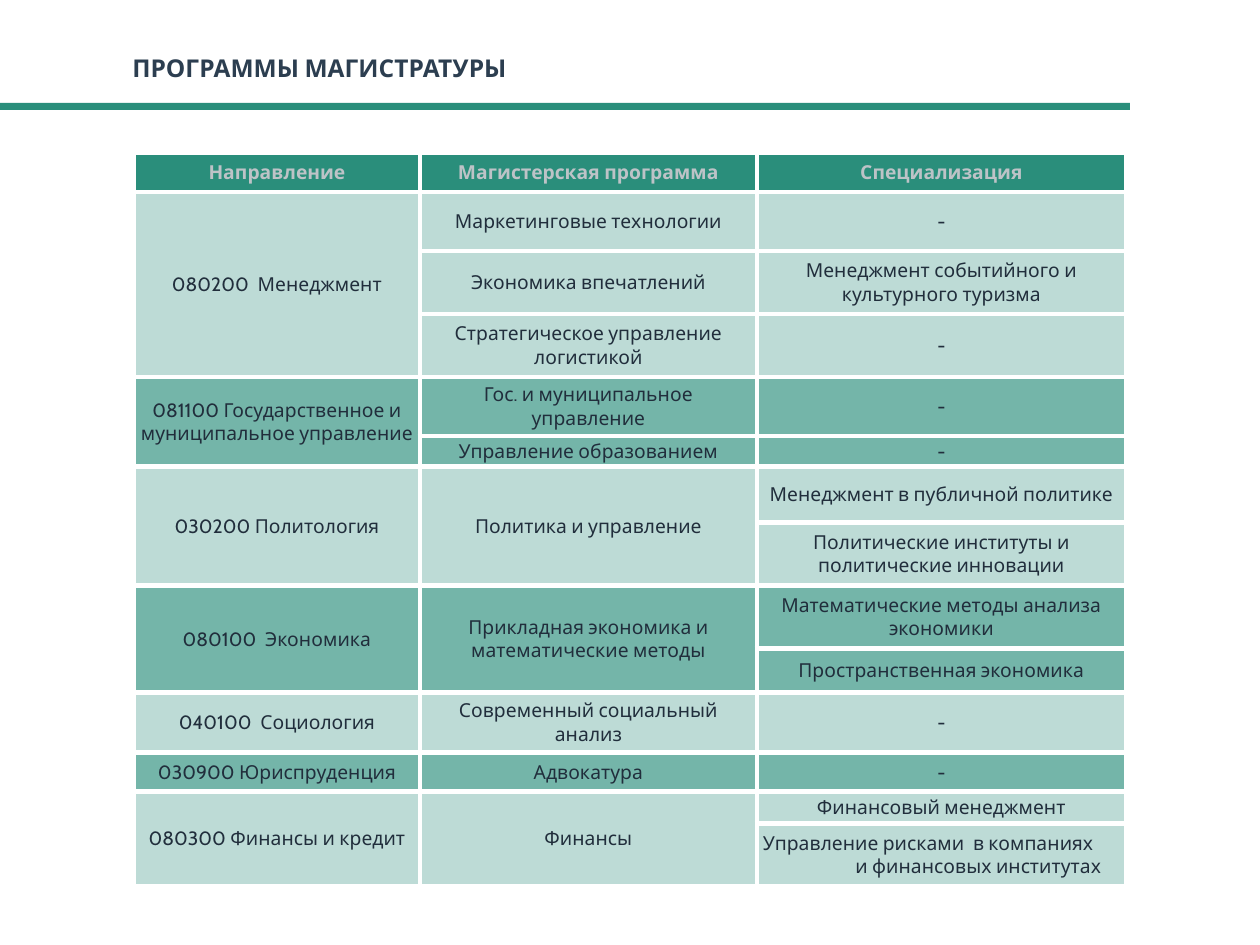
from dataclasses import dataclass

from lxml import etree
from pptx import Presentation
from pptx.dml.color import RGBColor
from pptx.enum.shapes import MSO_SHAPE
from pptx.enum.text import MSO_ANCHOR, PP_ALIGN
from pptx.oxml.ns import qn
from pptx.util import Pt

PX = 914400 // 126
RECTANGLE = MSO_SHAPE.RECTANGLE
MIDDLE = MSO_ANCHOR.MIDDLE
CENTER, LEFT = PP_ALIGN.CENTER, PP_ALIGN.LEFT


@dataclass(frozen=True)
class Theme:
    """Colours, font and type sizes of the slide."""
    font: str = "Cabin"
    accent: str = "2A8E7B"
    title: str = "2C3E50"
    header: str = "BDC3C7"
    body: str = "212E3C"
    border: str = "FFFFFF"
    title_size: int = 14
    table_size: int = 11
    border_width: int = 3
    light: int = 31
    dark: int = 65


THEME = Theme()
TITLE = "ПРОГРАММЫ МАГИСТРАТУРЫ"
HEADERS = ["Направление", "Магистерская программа", "Специализация"]
DIRECTIONS = [
    ("080200  Менеджмент", [
        ("Маркетинговые технологии", ["-"]),
        ("Экономика впечатлений", ["Менеджмент событийного и культурного туризма"]),
        ("Стратегическое управление логистикой", ["-"])]),
    ("081100 Государственное и муниципальное управление", [
        ("Гос. и муниципальное управление", ["-"]),
        ("Управление образованием", ["-"])]),
    ("030200 Политология", [
        ("Политика и управление", [
            "Менеджмент в публичной политике",
            "Политические институты и политические инновации"])]),
    ("080100  Экономика", [
        ("Прикладная экономика и математические методы", [
            "Математические методы анализа экономики",
            "Пространственная экономика"])]),
    ("040100  Социология", [("Современный социальный анализ", ["-"])]),
    ("030900 Юриспруденция", [("Адвокатура", ["-"])]),
    ("080300 Финансы и кредит", [
        ("Финансы", [
            "Финансовый менеджмент",
            "Управление рисками  в компаниях\nи финансовых институтах"])]),
]
COLUMN_WIDTHS = [286, 337, 369]
ROW_HEIGHTS = [39, 59, 63, 63, 59, 31, 56, 63, 63, 44, 60, 39, 32, 63]
SECOND_LINE_INDENT = 74


def style_run(run, size, color, bold):
    """Apply the theme font with the given size, colour and weight."""
    run.font.name = THEME.font
    run.font.size = Pt(size)
    run.font.bold = bold
    run.font.color.rgb = RGBColor.from_string(color)


def fill_cell(cell, opacity):
    """Give a cell white borders and the accent fill at an opacity in percent."""
    properties = cell._tc.get_or_add_tcPr()
    for side in ("a:lnL", "a:lnR", "a:lnT", "a:lnB"):
        line = etree.SubElement(properties, qn(side), w=str(Pt(THEME.border_width)))
        solid = etree.SubElement(line, qn("a:solidFill"))
        etree.SubElement(solid, qn("a:srgbClr"), val=THEME.border)
    cell.fill.solid()
    cell.fill.fore_color.rgb = RGBColor.from_string(THEME.accent)
    if opacity < 100:
        color = properties.find(qn("a:solidFill")).find(qn("a:srgbClr"))
        etree.SubElement(color, qn("a:alpha"), val=str(opacity * 1000))


def write_cell(cell, text, color, bold=False):
    """Write centred text; a second line is stepped to the right."""
    cell.text_frame.text = text
    paragraphs = cell.text_frame.paragraphs
    for paragraph in paragraphs:
        paragraph.alignment = CENTER
        paragraph.space_after = Pt(10)
        for run in paragraph.runs:
            style_run(run, THEME.table_size, color, bold)
    if len(paragraphs) > 1:
        paragraphs[0].alignment = LEFT
        paragraphs[0].space_after = Pt(0)
        paragraphs[1]._p.get_or_add_pPr().set("marL", str(SECOND_LINE_INDENT * PX))


def write_spanning(table, row, column, span, text):
    """Write a body cell that covers the given number of rows."""
    cell = table.cell(row, column)
    if span > 1:
        cell.merge(table.cell(row + span - 1, column))
    write_cell(cell, text, THEME.body)


def add_title(slide, left, top, width, height):
    """Place the slide heading in its box."""
    heading = slide.shapes.add_textbox(left * PX, top * PX, width * PX, height * PX)
    heading.text_frame.word_wrap = True
    heading.text_frame.text = TITLE
    style_run(heading.text_frame.paragraphs[0].runs[0],
              THEME.title_size, THEME.title, True)


def add_rule(slide, left, top, width, height):
    """Draw the accent bar under the heading."""
    bar = slide.shapes.add_shape(
        RECTANGLE, left * PX, top * PX, width * PX, height * PX)
    bar.shadow.inherit = False
    bar.fill.solid()
    bar.fill.fore_color.rgb = RGBColor.from_string(THEME.accent)
    bar.line.fill.background()


def add_programmes(slide, left, top):
    """Build the table of directions, programmes and specialisations."""
    table = slide.shapes.add_table(
        len(ROW_HEIGHTS), len(COLUMN_WIDTHS), left * PX, top * PX,
        sum(COLUMN_WIDTHS) * PX, sum(ROW_HEIGHTS) * PX).table
    for column, width in zip(table.columns, COLUMN_WIDTHS):
        column.width = width * PX
    for row, height in zip(table.rows, ROW_HEIGHTS):
        row.height = height * PX
    for cell in table.iter_cells():
        cell.vertical_anchor = MIDDLE
        cell.margin_left = cell.margin_right = 6 * PX
        cell.margin_top = cell.margin_bottom = 0

    for index, header in enumerate(HEADERS):
        write_cell(table.cell(0, index), header, THEME.header, True)
        fill_cell(table.cell(0, index), 100)

    row = 1
    for number, (direction, programmes) in enumerate(DIRECTIONS):
        opacity = THEME.dark if number % 2 else THEME.light
        direction_span = sum(len(items) for _, items in programmes)
        write_spanning(table, row, 0, direction_span, direction)
        for programme, specialisations in programmes:
            write_spanning(table, row, 1, len(specialisations), programme)
            for specialisation in specialisations:
                write_cell(table.cell(row, 2), specialisation, THEME.body)
                for column in range(len(HEADERS)):
                    fill_cell(table.cell(row, column), opacity)
                row += 1


def main():
    """Build and save the slide."""
    presentation = Presentation()
    presentation.slide_width = 1260 * PX
    presentation.slide_height = 945 * PX
    slide = presentation.slides.add_slide(presentation.slide_layouts[6])
    add_title(slide, 120, 47, 793, 43)
    add_programmes(slide, 134, 153)
    add_rule(slide, 0, 103, 1130, 7)
    presentation.save("out.pptx")


if __name__ == "__main__":
    main()
